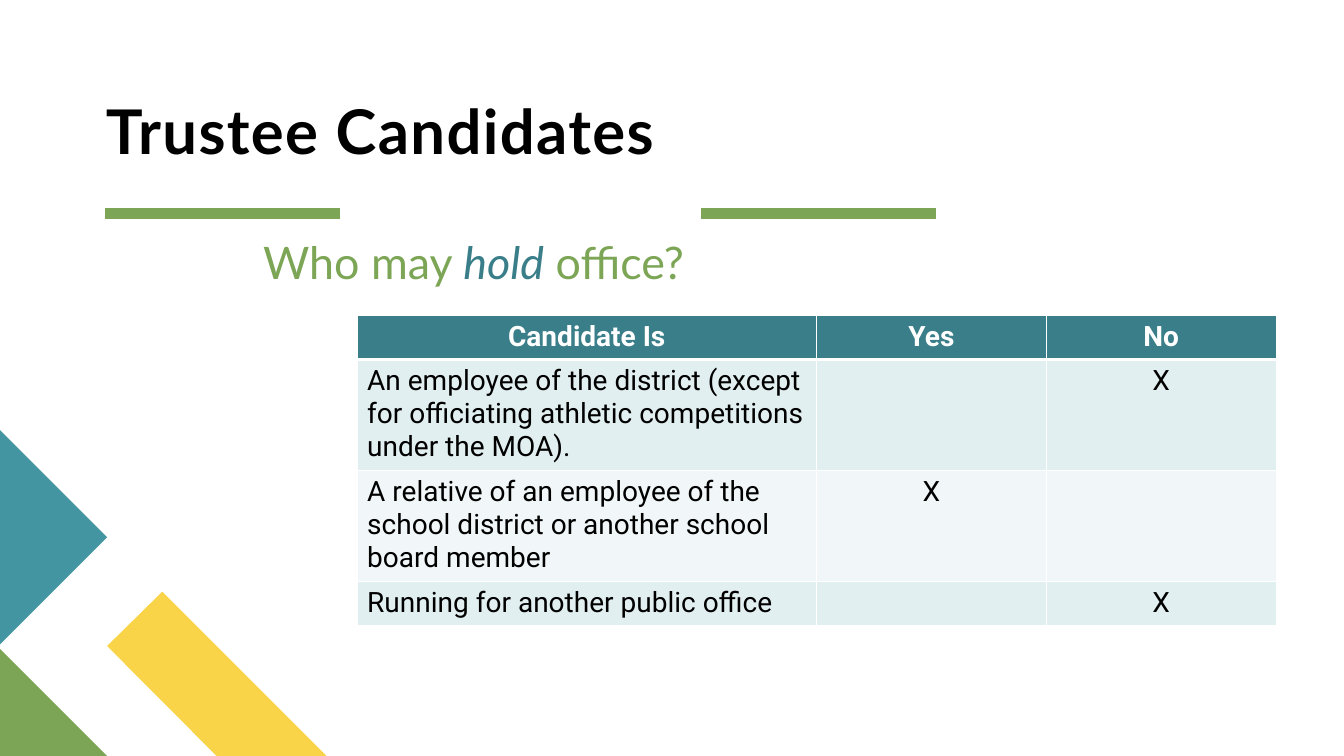
"""Builds the slide on who may hold office as a trustee."""
import dataclasses

import lxml.etree
import pptx
import pptx.dml.color
import pptx.enum.shapes
import pptx.enum.text
import pptx.oxml.ns
import pptx.util

Cm = pptx.util.Cm
Pt = pptx.util.Pt
qn = pptx.oxml.ns.qn
Align = pptx.enum.text.PP_ALIGN


def rgb(value):
    return pptx.dml.color.RGBColor.from_string(value)


@dataclasses.dataclass(frozen=True)
class Theme:
    black: str = "000000"
    white: str = "FFFFFF"
    green: str = "7CA655"
    yellow: str = "F9D448"
    teal: str = "4495A2"
    dark_teal: str = "397E89"
    bands: tuple = ("E2EFF1", "F1F7F8")
    heading_font: str = "Lato"
    table_font: str = "Roboto"
    title_size: int = 44
    question_size: int = 32
    table_size: int = 20
    rule_width: int = 8
    border: int = 1
    header_border: int = 3


class SlideBuilder:
    def __init__(self, slide, theme):
        self.slide = slide
        self.theme = theme

    def polygon(self, points, color):
        corners = [(Cm(x), Cm(y)) for x, y in points]
        builder = self.slide.shapes.build_freeform(*corners[0], scale=1.0)
        builder.add_line_segments(corners[1:], close=True)
        shape = builder.convert_to_shape()
        shape.shadow.inherit = False
        shape.fill.solid()
        shape.fill.fore_color.rgb = rgb(color)
        shape.line.fill.background()

    def rule(self, left, top, width):
        connector = self.slide.shapes.add_connector(
            pptx.enum.shapes.MSO_CONNECTOR.STRAIGHT,
            Cm(left), Cm(top), Cm(left + width), Cm(top))
        connector.line.color.rgb = rgb(self.theme.green)
        connector.line.width = Pt(self.theme.rule_width)
        properties = connector._element.spPr
        lxml.etree.SubElement(properties, qn("a:effectLst"))

    def style(self, run, font, size, color, bold=False, italic=False):
        run.font.name = font
        run.font.size = Pt(size)
        run.font.color.rgb = rgb(color)
        run.font.bold = bold
        run.font.italic = italic

    def text(self, left, top, width, height, anchor):
        box = self.slide.shapes.add_textbox(Cm(left), Cm(top), Cm(width), Cm(height))
        frame = box.text_frame
        frame.word_wrap = True
        frame.vertical_anchor = anchor
        frame.margin_left = frame.margin_right = 0
        frame.margin_top = frame.margin_bottom = 0
        paragraph = frame.paragraphs[0]
        paragraph.line_spacing = 0.9
        return paragraph

    def title(self, text, *place):
        paragraph = self.text(*place, pptx.enum.text.MSO_ANCHOR.BOTTOM)
        paragraph.text = text
        run = paragraph.runs[0]
        self.style(run, self.theme.heading_font, self.theme.title_size,
                   self.theme.black, bold=True)
        run.font._element.set("spc", "100")

    def question(self, parts, *place):
        paragraph = self.text(*place, pptx.enum.text.MSO_ANCHOR.TOP)
        paragraph.space_before = Pt(10)
        for text, color, italic in parts:
            run = paragraph.add_run()
            run.text = text
            self.style(run, self.theme.heading_font, self.theme.question_size,
                       color, italic=italic)

    def borders(self, cell, top, bottom):
        properties = cell._tc.get_or_add_tcPr()
        widths = {"a:lnL": self.theme.border, "a:lnR": self.theme.border,
                  "a:lnT": top, "a:lnB": bottom}
        for tag, width in widths.items():
            line = lxml.etree.SubElement(properties, qn(tag), w=str(Pt(width)))
            fill = lxml.etree.SubElement(line, qn("a:solidFill"))
            lxml.etree.SubElement(fill, qn("a:srgbClr"), val=self.theme.white)

    def cell(self, cell, text, row, column):
        theme = self.theme
        header = row == 0
        thin, thick = theme.border, theme.header_border
        self.borders(cell, thick if row == 1 else thin, thick if header else thin)
        cell.fill.solid()
        cell.fill.fore_color.rgb = rgb(
            theme.dark_teal if header else theme.bands[(row - 1) % 2])
        cell.text_frame.text = text
        paragraph = cell.text_frame.paragraphs[0]
        paragraph.alignment = Align.CENTER if header or column else Align.LEFT
        for run in paragraph.runs:
            self.style(run, theme.table_font, theme.table_size,
                       theme.white if header else theme.black, bold=header)

    def table(self, rows, left, top, widths, heights):
        frame = self.slide.shapes.add_table(
            len(rows), len(widths), Cm(left), Cm(top),
            Cm(sum(widths)), Cm(sum(heights)))
        table = frame.table
        for column, width in zip(table.columns, widths):
            column.width = Cm(width)
        for row, height in zip(table.rows, heights):
            row.height = Cm(height)
        for row, texts in enumerate(rows):
            for column, text in enumerate(texts):
                self.cell(table.cell(row, column), text, row, column)


def main():
    presentation = pptx.Presentation()
    presentation.slide_width = Cm(33.87)
    presentation.slide_height = Cm(19.05)
    slide = presentation.slides.add_slide(presentation.slide_layouts[6])
    theme = Theme()
    builder = SlideBuilder(slide, theme)

    builder.polygon([(8.23, 19.05), (5.46, 19.05), (2.7, 16.28), (4.09, 14.91)],
                    theme.yellow)
    builder.polygon([(2.7, 19.05), (0, 19.05), (0, 16.35)], theme.green)
    builder.polygon([(0, 10.84), (2.7, 13.54), (0, 16.24)], theme.teal)
    for left in (2.65, 17.67):
        builder.rule(left, 5.39, 5.93)

    builder.title("Trustee Candidates", 2.67, 2.44, 20.09, 1.8)
    builder.question([("Who may ", theme.green, False),
                      ("hold", theme.dark_teal, True),
                      (" office?", theme.green, False)],
                     6.63, 6.07, 21.41, 4.06)
    builder.table(
        [("Candidate Is", "Yes", "No"),
         ("An employee of the district (except for officiating athletic "
          "competitions under the MOA).", "", "X"),
         ("A relative of an employee of the school district or another "
          "school board member", "X", ""),
         ("Running for another public office", "", "X")],
        9, 7.96, (11.58, 5.79, 5.79), (1.09, 2.75, 2.75, 1.09))
    presentation.save("out.pptx")


if __name__ == "__main__":
    main()
